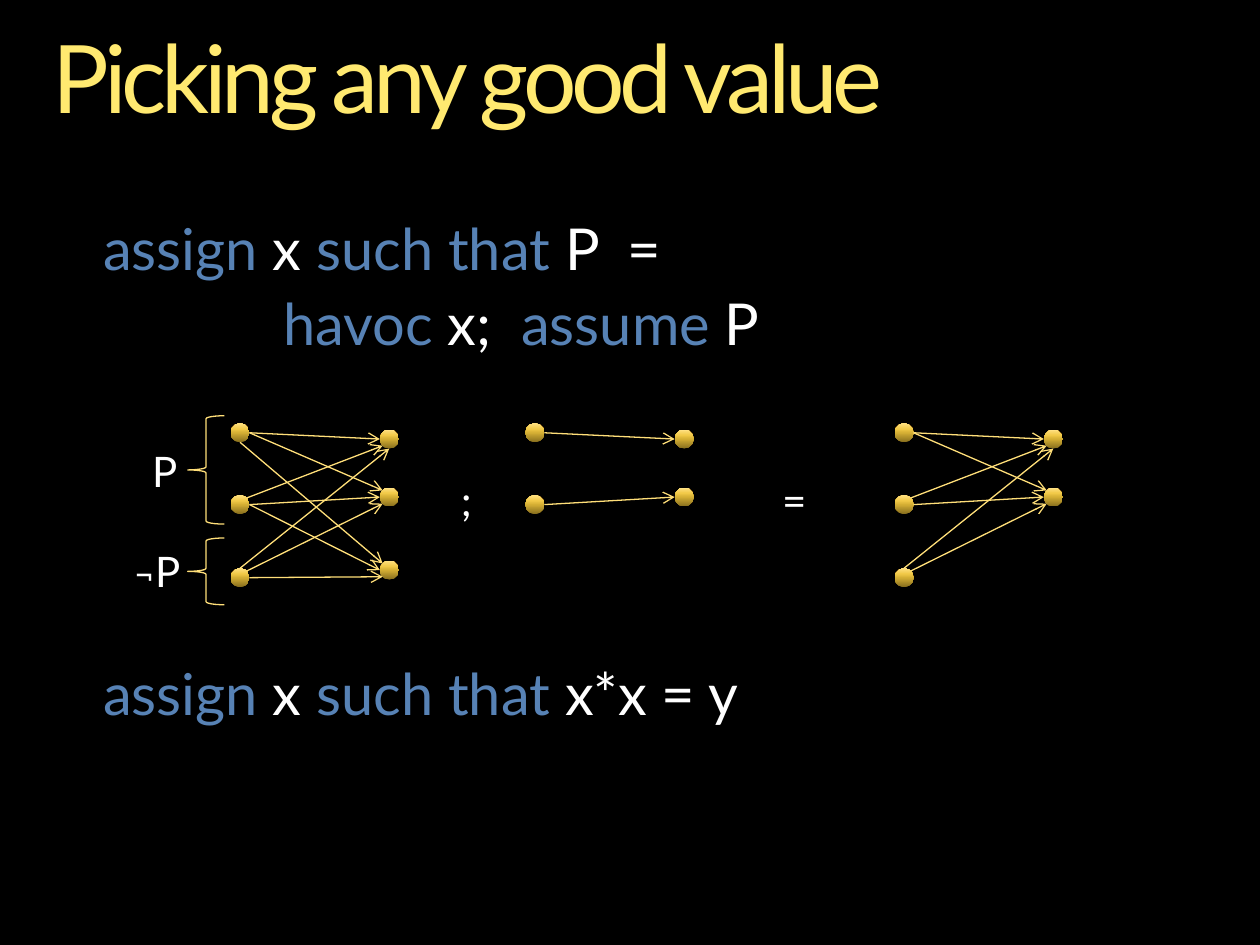
from pptx import Presentation
from pptx.dml.color import RGBColor
from pptx.enum import shapes, text
from pptx.oxml import parse_xml
from pptx.oxml.ns import nsdecls, qn
from pptx.util import Inches, Pt

BLACK = RGBColor(0x00, 0x00, 0x00)
WHITE = RGBColor(0xFF, 0xFF, 0xFF)
BLUE = RGBColor(0x57, 0x82, 0xB5)
YELLOW = RGBColor(0xFF, 0xE9, 0x70)
GOLD = RGBColor(0xFF, 0xDF, 0x79)
STOPS = [(0, RGBColor(0x87, 0x6E, 0x1E)), (50, RGBColor(0xD5, 0xAF, 0x34)),
         (70, RGBColor(0xF1, 0xC9, 0x48)), (100, RGBColor(0xFF, 0xE1, 0x83))]


def place(shape, box):
    """Move a text shape to box and give its frame plain, top-set text."""
    shape.left, shape.top, shape.width, shape.height = map(Inches, box)
    frame = shape.text_frame
    frame.word_wrap = True
    frame.auto_size = text.MSO_AUTO_SIZE.NONE
    frame.vertical_anchor = text.MSO_ANCHOR.TOP
    return frame


def write(para, words, size, color, font="Lato"):
    run = para.add_run()
    run.text = words
    for key, value in {"name": font, "size": Pt(size)}.items():
        setattr(run.font, key, value)
    run.font.color.rgb = color
    return run


prs = Presentation()
prs.slide_width, prs.slide_height = Inches(10), Inches(7.5)
slide = prs.slides.add_slide(prs.slide_layouts[1])
slide.background.fill.solid()
slide.background.fill.fore_color.rgb = BLACK

# Title and statements
title = place(slide.shapes.title, (0.42, 0.25, 9.17, 0.82))
body = place(slide.placeholders[1], (0.82, 1.75, 8.76, 4.17))
for frame in (title, body):
    for side in ("left", "top", "right", "bottom"):
        setattr(frame, f"margin_{side}", 0)
head = title.paragraphs[0]
head.alignment, head.line_spacing = text.PP_ALIGN.LEFT, 0.9
run = write(head, "Picking any good value", 54, YELLOW)
run.font._element.set("spc", "-300")

# Each statement: left indent, space before, alternating keywords and terms
lines = [(0, 0, ["assign", " x ", "such that", " P  ="]),
         (1.43, 7, ["havoc", " x;  ", "assume", " P"]),
         (0, 176, ["assign", " x ", "such that", " x*x = y"])]
for n, (indent, gap, parts) in enumerate(lines):
    para = body.add_paragraph() if n else body.paragraphs[0]
    para.line_spacing, para.space_before = 0.9, Pt(gap)
    props = para._p.get_or_add_pPr()
    props.set("marL", str(Inches(indent)))
    props.set("indent", "0")
    props.append(parse_xml(f"<a:buNone {nsdecls('a')}/>"))
    for k, part in enumerate(parts):
        write(para, part, 33, WHITE if k % 2 else BLUE)

# Relation graphs: dots in two columns, arrows between points on their rims
SIZE, SPAN = 0.15, 1.185
TOPS = [[3.36, 3.93, 4.51], [3.41, 3.87, 4.45]]
RIM = {"t": (0.5, 0), "b": (0.5, 1), "l": (0, 0.5), "r": (1, 0.5),
       "tl": (0.15, 0.15), "tr": (0.85, 0.15), "bl": (0.15, 0.85)}
EDGES = [(0, "r", 1, "tl"), (1, "r", 1, "l"), (2, "tr", 1, "bl"),
         (0, "r", 0, "l"), (1, "r", 2, "l"), (1, "tr", 0, "bl"),
         (2, "r", 2, "bl"), (2, "t", 0, "b"), (0, "b", 2, "tl")]
GRAPHS = [(1.83, 3, 3, EDGES),
          (4.17, 2, 2, [e for e in EDGES if e[0] == e[2] < 2]),
          (7.1, 3, 2, [e for e in EDGES if e[2] < 2])]
stops = "".join(f'<a:gs pos="{pos * 1000}"><a:srgbClr val="{color}"/></a:gs>'
                for pos, color in STOPS)
shade = (f"<a:gradFill {nsdecls('a')}><a:gsLst>{stops}</a:gsLst>"
         '<a:lin ang="16200000" scaled="0"/></a:gradFill>')

for left, starts, ends, edges in GRAPHS:
    for col, count in enumerate((starts, ends)):
        for top in TOPS[col][:count]:
            dot = slide.shapes.add_shape(
                shapes.MSO_SHAPE.OVAL, Inches(left + col * SPAN), Inches(top),
                Inches(SIZE), Inches(SIZE))
            dot.shadow.inherit = False
            dot.line.fill.background()
            dot._element.spPr.find(qn("a:prstGeom")).addnext(parse_xml(shade))
    for i, out, j, into in edges:
        ports = []
        for col, row, rim in ((0, i, out), (1, j, into)):
            dx, dy = RIM[rim]
            ports += [Inches(left + col * SPAN + dx * SIZE),
                      Inches(TOPS[col][row] + dy * SIZE)]
        arrow = slide.shapes.add_connector(shapes.MSO_CONNECTOR.STRAIGHT, *ports)
        arrow.line.color.rgb, arrow.line.width = GOLD, Pt(0.75)
        arrow.line._get_or_add_ln().append(
            parse_xml(f'<a:tailEnd {nsdecls("a")} type="arrow"/>'))
        arrow._element.spPr.append(parse_xml(f"<a:effectLst {nsdecls('a')}/>"))

for top, height in ((3.3, 0.86), (4.27, 0.53)):
    brace = slide.shapes.add_shape(shapes.MSO_SHAPE.LEFT_BRACE, Inches(1.49),
                                   Inches(top), Inches(0.29), Inches(height))
    brace.shadow.inherit = False
    brace.fill.background()
    brace.line.color.rgb, brace.line.width = GOLD, Pt(0.75)

LEFT, RIGHT = text.PP_ALIGN.LEFT, text.PP_ALIGN.RIGHT
LABELS = [(1.11, 3.49, 0.38, LEFT, [("P", "Lato")]),
          (0.78, 4.28, 0.75, RIGHT, [("¬", "Karla"), ("P", "Lato")]),
          (3.56, 3.72, 0.38, LEFT, [(";", "Lato")]),
          (6.11, 3.72, 0.38, LEFT, [("=", "Lato")])]
for left, top, width, align, parts in LABELS:
    label = slide.shapes.add_textbox(0, 0, 0, 0)
    para = place(label, (left, top, width, 0.5)).paragraphs[0]
    para.alignment = align
    for words, font in parts:
        write(para, words, 24, WHITE, font)

prs.save("out.pptx")
